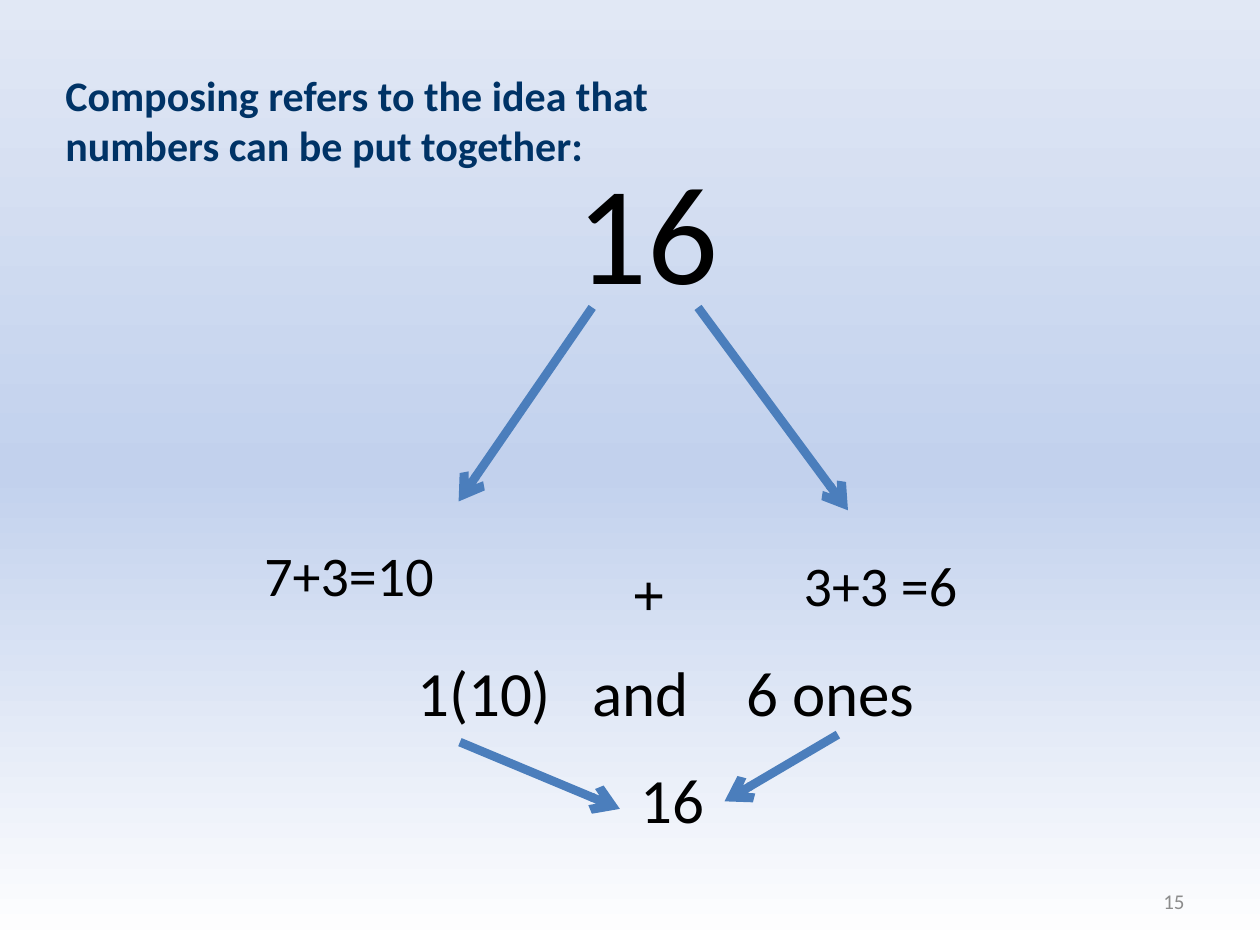
from copy import deepcopy
from typing import NamedTuple

from pptx import Presentation
from pptx.dml.color import RGBColor
from pptx.enum.shapes import MSO_CONNECTOR
from pptx.enum.text import MSO_ANCHOR, MSO_AUTO_SIZE, PP_ALIGN
from pptx.oxml.ns import qn
from pptx.oxml.xmlchemy import OxmlElement
from pptx.util import Pt

STRAIGHT = MSO_CONNECTOR.STRAIGHT
TOP, MIDDLE = MSO_ANCHOR.TOP, MSO_ANCHOR.MIDDLE
LEFT, CENTER, RIGHT = PP_ALIGN.LEFT, PP_ALIGN.CENTER, PP_ALIGN.RIGHT
FIT_SHAPE, FIXED = MSO_AUTO_SIZE.SHAPE_TO_FIT_TEXT, MSO_AUTO_SIZE.NONE

BLACK, NAVY, GREY, ARROW_BLUE = "000000", "003366", "8C8C8C", "4B7EBC"
GRADIENT = [(0, "FFFFFF"), (0.5, "C2D1ED"), (1, "E1E8F5")]
ARROW_WIDTH = 5
SUM_INSET = 62
SUM_TABS = (100, 188)
SUM_GAP = 18


class Label(NamedTuple):
    text: str
    left: float
    top: float
    width: float
    height: float
    size: float
    color: str = BLACK
    font: str = "Calibri"
    bold: bool = False
    align: PP_ALIGN = LEFT
    anchor: MSO_ANCHOR = TOP
    fit: MSO_AUTO_SIZE = FIT_SHAPE


class Arrow(NamedTuple):
    start_x: float
    start_y: float
    end_x: float
    end_y: float


PAGE_NUMBER = Label("15", 516.24, 500.4, 167.76, 28.8, 12, GREY,
                    align=RIGHT, anchor=MIDDLE, fit=FIXED)
HEADING = Label("Composing refers to the idea that numbers can be put together:",
                30.24, 36, 372.24, 65.52, 24, NAVY, bold=True)
WHOLE = Label("16", 322.56, 79.2, 415.44, 92.88, 80)
TENS = Label("7+3=10", 144, 305.28, 167.76, 41.04, 32)
PLUS = Label("+", 354.24, 316.08, 43.2, 41.04, 32, font="Arial")
ONES = Label("3+3 =6", 452.16, 311.04, 140.4, 41.04, 32)
SUM = Label("1(10)\tand\t6 ones\n16", 176.4, 370.08, 416.16, 103.68, 36)

ARROWS = [
    Arrow(338.4, 175.68, 262.08, 286.56),
    Arrow(398.88, 175.68, 484.56, 291.6),
    Arrow(262.8, 424.08, 354.24, 462.24),
    Arrow(478.8, 419.76, 414, 457.92),
]


def rgb(color: str) -> RGBColor:
    return RGBColor.from_string(color)


def paint_background(page) -> None:
    fill = page.background.fill
    fill.gradient()
    fill.gradient_angle = 90
    stop_list = page.element.find(".//" + qn("a:gsLst"))
    stop_list.insert(1, deepcopy(stop_list[0]))
    for stop, (position, color) in zip(fill.gradient_stops, GRADIENT):
        stop.position = position
        stop.color.rgb = rgb(color)


def add_label(page, label: Label):
    box = page.shapes.add_textbox(Pt(label.left), Pt(label.top),
                                  Pt(label.width), Pt(label.height))
    frame = box.text_frame
    frame.word_wrap = True
    frame.auto_size = label.fit
    frame.vertical_anchor = label.anchor
    frame.text = label.text
    for para in frame.paragraphs:
        para.alignment = label.align
        for span in para.runs:
            span.font.name = label.font
            span.font.size = Pt(label.size)
            span.font.bold = label.bold
            span.font.color.rgb = rgb(label.color)
    return box


def add_sum(page) -> None:
    """Line the parts up on tab stops and centre the result beneath them."""
    frame = add_label(page, SUM).text_frame
    frame.margin_left = frame.margin_right = Pt(SUM_INSET)
    parts, result = frame.paragraphs
    tab_list = OxmlElement("a:tabLst")
    for position in SUM_TABS:
        tab = OxmlElement("a:tab")
        tab.set("pos", str(Pt(position)))
        tab.set("algn", "l")
        tab_list.append(tab)
    parts.alignment = LEFT
    parts._p.get_or_add_pPr().append(tab_list)
    result.alignment = CENTER
    result.space_before = Pt(SUM_GAP)


def add_arrow(page, arrow: Arrow) -> None:
    connector = page.shapes.add_connector(STRAIGHT, *(Pt(value) for value in arrow))
    connector.line.color.rgb = rgb(ARROW_BLUE)
    connector.line.width = Pt(ARROW_WIDTH)
    properties = connector.element.spPr
    head = OxmlElement("a:tailEnd")
    head.set("type", "arrow")
    properties.find(qn("a:ln")).append(head)
    properties.append(OxmlElement("a:effectLst"))


def main() -> None:
    deck = Presentation()
    deck.slide_width, deck.slide_height = Pt(720), Pt(540)
    page = deck.slides.add_slide(deck.slide_layouts[6])
    paint_background(page)
    for label in (PAGE_NUMBER, HEADING, WHOLE, TENS, PLUS, ONES):
        add_label(page, label)
    add_sum(page)
    for arrow in ARROWS:
        add_arrow(page, arrow)
    deck.save("out.pptx")


if __name__ == "__main__":
    main()
